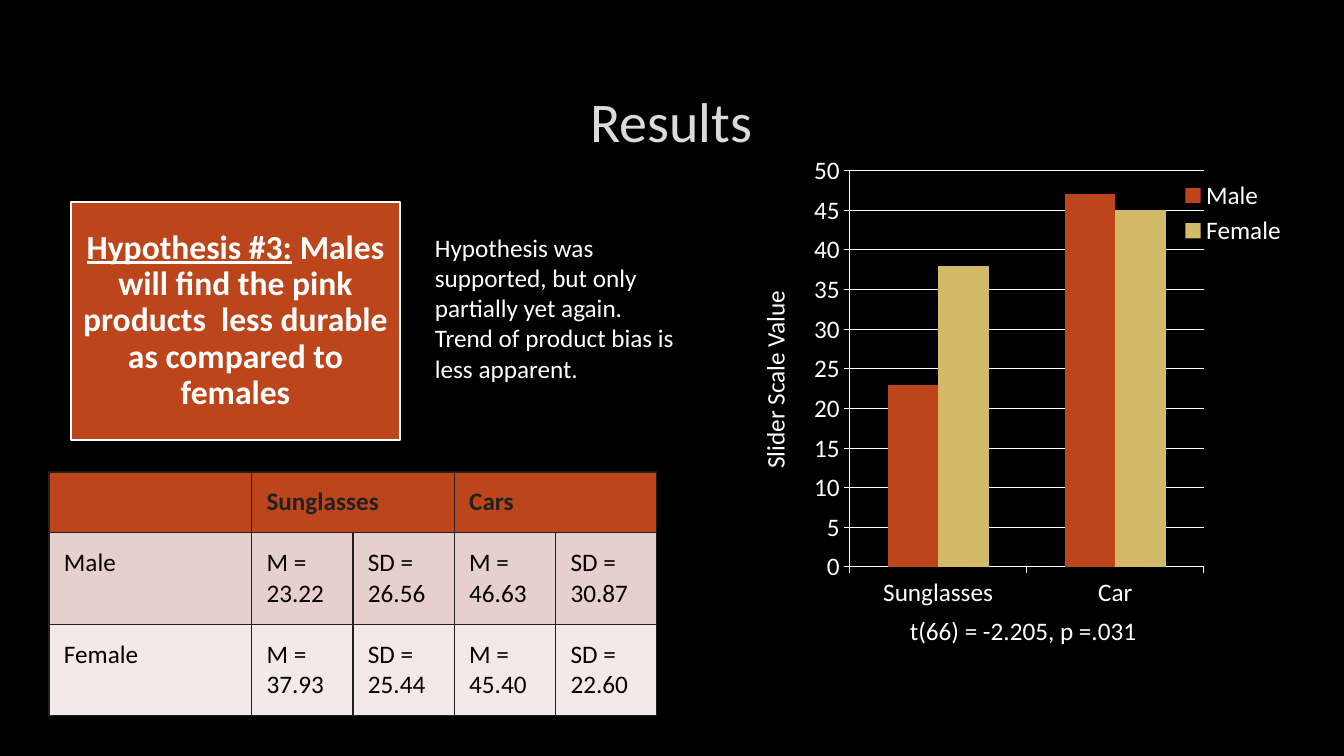
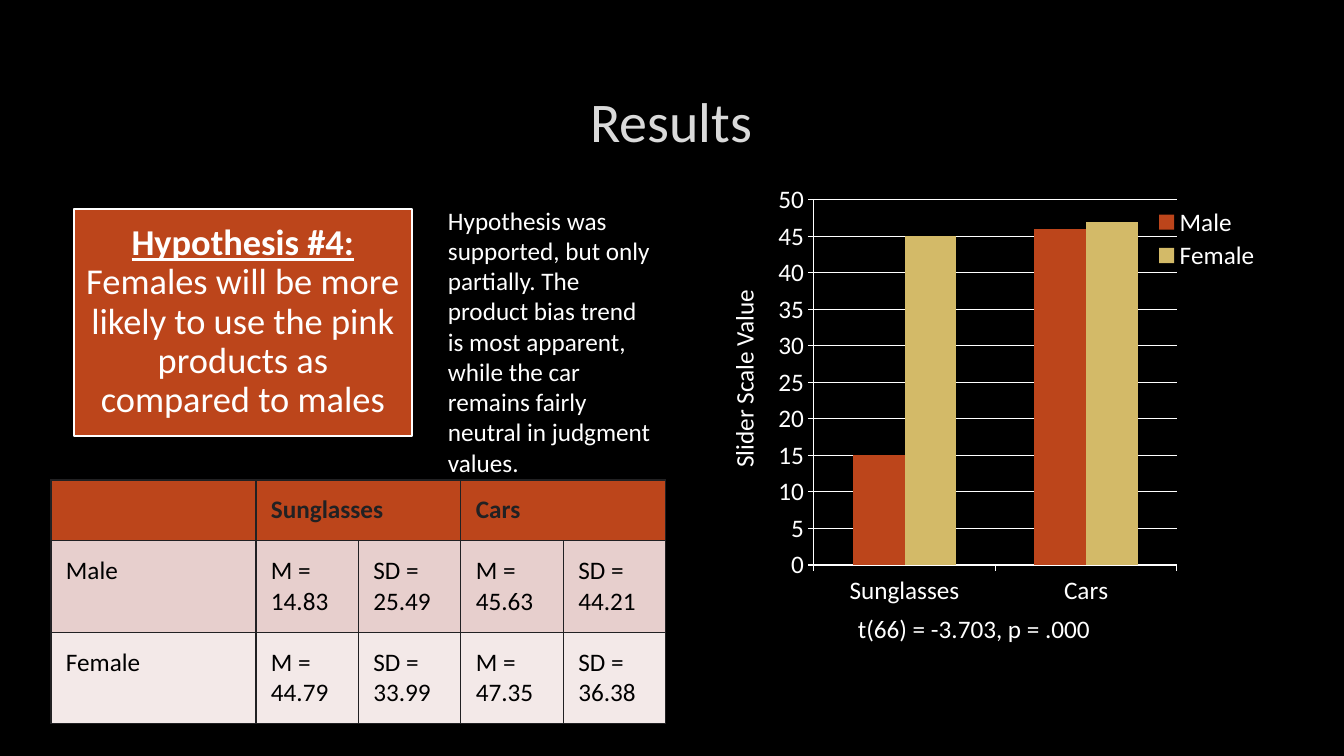
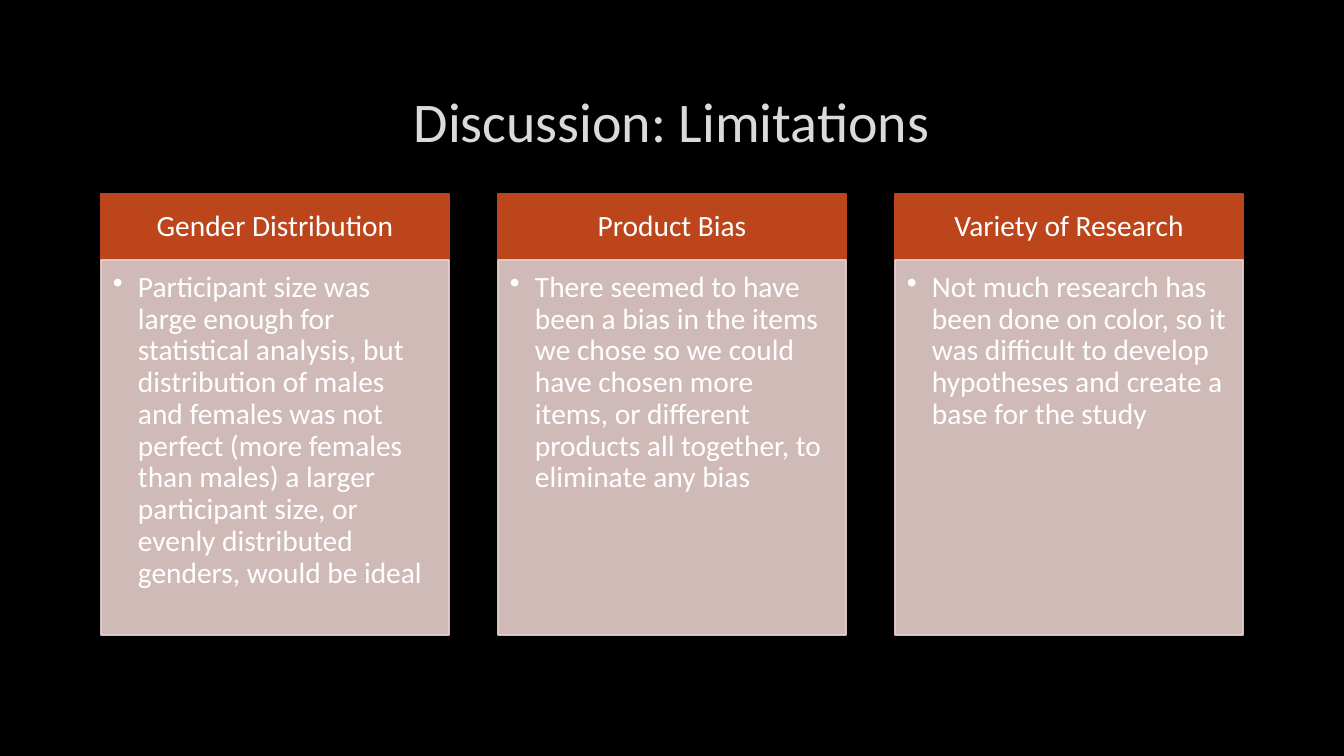
from dataclasses import dataclass

from lxml import etree
from pptx import Presentation
from pptx import util as u
from pptx.chart.data import CategoryChartData
from pptx.dml.color import RGBColor
from pptx.enum import chart as charts, shapes, text
from pptx.oxml import parse_xml
from pptx.oxml.ns import nsdecls, qn

EMU_PER_PX = 914400 / 100.8


@dataclass(frozen=True)
class Theme:
    font: str = "Calibri"
    background: str = "000000"
    title: str = "DADADA"
    light: str = "FFFFFF"
    accent: str = "BC451B"
    second: str = "D3BA68"
    band: str = "E7CFCD"
    pale_band: str = "F3E9E8"
    dark: str = "212123"
    cell_text: str = "000000"
    title_size: int = 40
    column_size: int = 21
    body_size: int = 18


THEME = Theme()
GENDERS = ("Male", "Female")
TITLE_FRAME = (101, 67, 1141, 107)


@dataclass(frozen=True)
class Result:
    """Content of one results slide; frames are left, top, width, height."""
    heading: str
    claim: str
    claim_size: int
    claim_bold: bool
    claim_frame: tuple
    claim_inset: int
    finding: str
    finding_frame: tuple
    categories: tuple
    means: tuple
    deviations: tuple
    table_frame: tuple
    chart_frame: tuple
    axis_frame: tuple
    statistic: str
    statistic_frame: tuple


RESULTS = (
    Result(
        heading="Hypothesis #3:",
        claim="Males will find the pink products  less durable as compared to females",
        claim_size=24, claim_bold=True, claim_frame=(71, 202, 329, 238), claim_inset=10,
        finding="Hypothesis was supported, but only partially yet again. "
                "Trend of product bias is less apparent.",
        finding_frame=(425, 227, 267, 163),
        categories=("Sunglasses", "Car"),
        means=((23.22, 46.63), (37.93, 45.40)),
        deviations=((26.56, 30.87), (25.44, 22.60)),
        table_frame=(49, 472, 608, 242), chart_frame=(802, 147, 529, 472),
        axis_frame=(669, 353, 211, 40),
        statistic="t(66) = -2.205, p =.031", statistic_frame=(900, 610, 277, 40)),
    Result(
        heading="Hypothesis #4:",
        claim="Females will be more likely to use the pink products as compared to males",
        claim_size=26, claim_bold=False, claim_frame=(74, 209, 338, 227), claim_inset=11,
        finding="Hypothesis was supported, but only partially. The product bias trend "
                "is most apparent, while the car remains fairly neutral in judgment values.",
        finding_frame=(438, 200, 226, 285),
        categories=("Sunglasses", "Cars"),
        means=((14.83, 45.63), (44.79, 47.35)),
        deviations=((25.49, 44.21), (33.99, 36.38)),
        table_frame=(51, 480, 615, 242), chart_frame=(765, 178, 542, 435),
        axis_frame=(638, 352, 211, 40),
        statistic="t(66) = -3.703, p = .000", statistic_frame=(848, 608, 282, 40)),
)

LIMITATIONS = (
    ("Gender Distribution",
     "Participant size was large enough for statistical analysis, but distribution of "
     "males and females was not perfect (more females than males) a larger participant "
     "size, or evenly distributed genders, would be ideal"),
    ("Product Bias",
     "There seemed to have been a bias in the items we chose so we could have chosen "
     "more items, or different products all together, to eliminate any bias"),
    ("Variety of Research",
     "Not much research has been done on color, so it was difficult to develop "
     "hypotheses and create a base for the study"),
)


def px(length):
    return u.Emu(round(length * EMU_PER_PX))


def place(frame):
    return [px(length) for length in frame]


def rgb(color):
    return RGBColor.from_string(color)


def style_font(font, size, color, bold=False):
    font.name = THEME.font
    font.size = u.Pt(size)
    font.bold = bold
    font.color.rgb = rgb(color)


def style_runs(paragraph, size, color, bold=False):
    for run in paragraph.runs:
        style_font(run.font, size, color, bold)


def set_margins(target, left, top, right, bottom):
    target.margin_left, target.margin_top = px(left), px(top)
    target.margin_right, target.margin_bottom = px(right), px(bottom)


def add_titled_slide(presentation, title):
    slide = presentation.slides.add_slide(presentation.slide_layouts[5])
    shape = slide.shapes.title
    shape.left, shape.top, shape.width, shape.height = place(TITLE_FRAME)
    frame = shape.text_frame
    frame.text = title
    frame.vertical_anchor = text.MSO_ANCHOR.MIDDLE
    frame.paragraphs[0].alignment = text.PP_ALIGN.CENTER
    style_runs(frame.paragraphs[0], THEME.title_size, THEME.title)
    return slide


def add_label(slide, frame, content, wrap=False, rotation=0):
    box = slide.shapes.add_textbox(*place(frame))
    box.rotation = rotation
    box.text_frame.word_wrap = wrap
    box.text_frame.text = content
    style_runs(box.text_frame.paragraphs[0], THEME.body_size, THEME.light)


def add_box(slide, frame, fill, line, margins, centered=True):
    """Add a filled rectangle and return it, ready for its text."""
    box = slide.shapes.add_shape(shapes.MSO_SHAPE.RECTANGLE, *place(frame))
    box.shadow.inherit = False
    box.fill.solid()
    box.fill.fore_color.rgb = rgb(fill)
    box.line.color.rgb = rgb(line)
    box.line.width = u.Pt(1.25)
    box.text_frame.word_wrap = True
    set_margins(box.text_frame, *margins)
    anchors, aligns = text.MSO_ANCHOR, text.PP_ALIGN
    box.text_frame.vertical_anchor = anchors.MIDDLE if centered else anchors.TOP
    paragraph = box.text_frame.paragraphs[0]
    paragraph.alignment = aligns.CENTER if centered else aligns.LEFT
    paragraph.line_spacing = 0.9
    return box


def add_claim(slide, result):
    box = add_box(slide, result.claim_frame, THEME.accent, THEME.light,
                  [result.claim_inset] * 4)
    paragraph = box.text_frame.paragraphs[0]
    for content, bold in ((result.heading, True), (" " + result.claim, result.claim_bold)):
        run = paragraph.add_run()
        run.text = content
        style_font(run.font, result.claim_size, THEME.light, bold)
    paragraph.runs[0].font.underline = True


def set_borders(cell):
    properties = cell._tc.get_or_add_tcPr()
    for index, side in enumerate(("lnL", "lnR", "lnT", "lnB")):
        properties.insert(index, parse_xml(
            f'<a:{side} {nsdecls("a")} w="12700"><a:solidFill>'
            f'<a:srgbClr val="{THEME.dark}"/></a:solidFill></a:{side}>'))


def fill_cell(cell, content, fill, color, bold):
    cell.text = content
    set_margins(cell, 15, 15, 15, 15)
    cell.fill.solid()
    cell.fill.fore_color.rgb = rgb(fill)
    style_runs(cell.text_frame.paragraphs[0], THEME.body_size, color, bold)
    set_borders(cell)


def add_statistics_table(slide, result):
    rows = [["", "Sunglasses", "", "Cars", ""]]
    for gender, means, deviations in zip(GENDERS, result.means, result.deviations):
        row = [gender]
        for mean, deviation in zip(means, deviations):
            row += [f"M = {mean:.2f}", f"SD = {deviation:.2f}"]
        rows.append(row)

    table = slide.shapes.add_table(3, 5, *place(result.table_frame)).table
    table.horz_banding = False
    unit = result.table_frame[2] / 6
    for column, units in zip(table.columns, (2, 1, 1, 1, 1)):
        column.width = px(unit * units)
    for row, height in zip(table.rows, (60, 91, 91)):
        row.height = px(height)
    fills = (THEME.accent, THEME.band, THEME.pale_band)
    for row_index, row in enumerate(rows):
        header = row_index == 0
        color = THEME.dark if header else THEME.cell_text
        for column_index, content in enumerate(row):
            fill_cell(table.cell(row_index, column_index), content,
                      fills[row_index], color, header)
    for start in (1, 3):
        table.cell(0, start).merge(table.cell(0, start + 1))


def set_layout(element, x, y, w, h, inner=False):
    """Fix a chart part at fractions of the chart's width and height."""
    target = '<c:layoutTarget val="inner"/>' if inner else ""
    modes = '<c:xMode val="edge"/><c:yMode val="edge"/>'
    sizes = "".join(f'<c:{name} val="{value}"/>'
                    for name, value in zip("xywh", (x, y, w, h)))
    layout = parse_xml(f'<c:layout {nsdecls("c")}><c:manualLayout>{target}{modes}{sizes}'
                       '</c:manualLayout></c:layout>')
    for previous in element.findall(qn("c:layout")):
        element.remove(previous)
    position = element.find(qn("c:legendPos"))
    element.insert(0 if position is None else element.index(position) + 1, layout)


def style_line(line):
    line.color.rgb = rgb(THEME.light)
    line.width = u.Pt(0.75)


def add_means_chart(slide, result):
    data = CategoryChartData()
    data.categories = result.categories
    for gender, means in zip(GENDERS, result.means):
        data.add_series(gender, [round(mean) for mean in means])
    chart = slide.shapes.add_chart(charts.XL_CHART_TYPE.COLUMN_CLUSTERED,
                                   *place(result.chart_frame), data).chart
    style_font(chart.font, THEME.body_size, THEME.light)
    chart.has_title = False
    chart.has_legend = True
    chart.legend.position = charts.XL_LEGEND_POSITION.RIGHT
    chart.legend.include_in_layout = False
    plot = chart.plots[0]
    plot.gap_width = 150
    plot.overlap = 0
    plot.vary_by_categories = False
    for series, color in zip(plot.series, (THEME.accent, THEME.second)):
        series.format.fill.solid()
        series.format.fill.fore_color.rgb = rgb(color)
    for axis in (chart.category_axis, chart.value_axis):
        axis.major_tick_mark = charts.XL_TICK_MARK.OUTSIDE
        style_line(axis.format.line)
    values = chart.value_axis
    values.minimum_scale, values.maximum_scale, values.major_unit = 0, 50, 5
    values.has_major_gridlines = True
    style_line(values.major_gridlines.format.line)
    set_layout(chart._chartSpace.chart.plotArea, 0.09, 0.05, 0.67, 0.84, inner=True)
    set_layout(chart.legend._element, 0.71, 0.06, 0.21, 0.16)


def add_result_slide(presentation, result):
    slide = add_titled_slide(presentation, "Results")
    add_claim(slide, result)
    add_means_chart(slide, result)
    add_statistics_table(slide, result)
    add_label(slide, result.axis_frame, "Slider Scale Value", rotation=270)
    add_label(slide, result.statistic_frame, result.statistic)
    add_label(slide, result.finding_frame, result.finding, wrap=True)


def make_translucent(box, percent):
    for color in box._element.spPr.iter(qn("a:srgbClr")):
        etree.SubElement(color, qn("a:alpha")).set("val", str(percent * 1000))


def add_bullet(paragraph, indent):
    properties = paragraph._p.get_or_add_pPr()
    properties.set("marL", str(px(indent)))
    properties.set("indent", str(-px(indent)))
    etree.SubElement(properties, qn("a:buChar")).set("char", "•")


def add_limitation(slide, left, heading, detail):
    width, top, header_height, body_height = 348, 194, 66, 375
    header = add_box(slide, (left, top, width, header_height), THEME.accent,
                     THEME.accent, (16, 9, 16, 9))
    body = add_box(slide, (left, top + header_height, width, body_height), THEME.band,
                   THEME.band, (12, 12, 16, 18), centered=False)
    make_translucent(body, 90)
    for box, content in ((header, heading), (body, detail)):
        paragraph = box.text_frame.paragraphs[0]
        paragraph.text = content
        style_runs(paragraph, THEME.column_size, THEME.light)
    add_bullet(body.text_frame.paragraphs[0], 25)


def add_limitations_slide(presentation):
    slide = add_titled_slide(presentation, "Discussion: Limitations")
    for index, (heading, detail) in enumerate(LIMITATIONS):
        add_limitation(slide, 101 + 397 * index, heading, detail)


def main():
    presentation = Presentation()
    presentation.slide_width, presentation.slide_height = px(1344), px(756)
    background = presentation.slide_master.background.fill
    background.solid()
    background.fore_color.rgb = rgb(THEME.background)
    for result in RESULTS:
        add_result_slide(presentation, result)
    add_limitations_slide(presentation)
    presentation.save("out.pptx")


if __name__ == "__main__":
    main()
